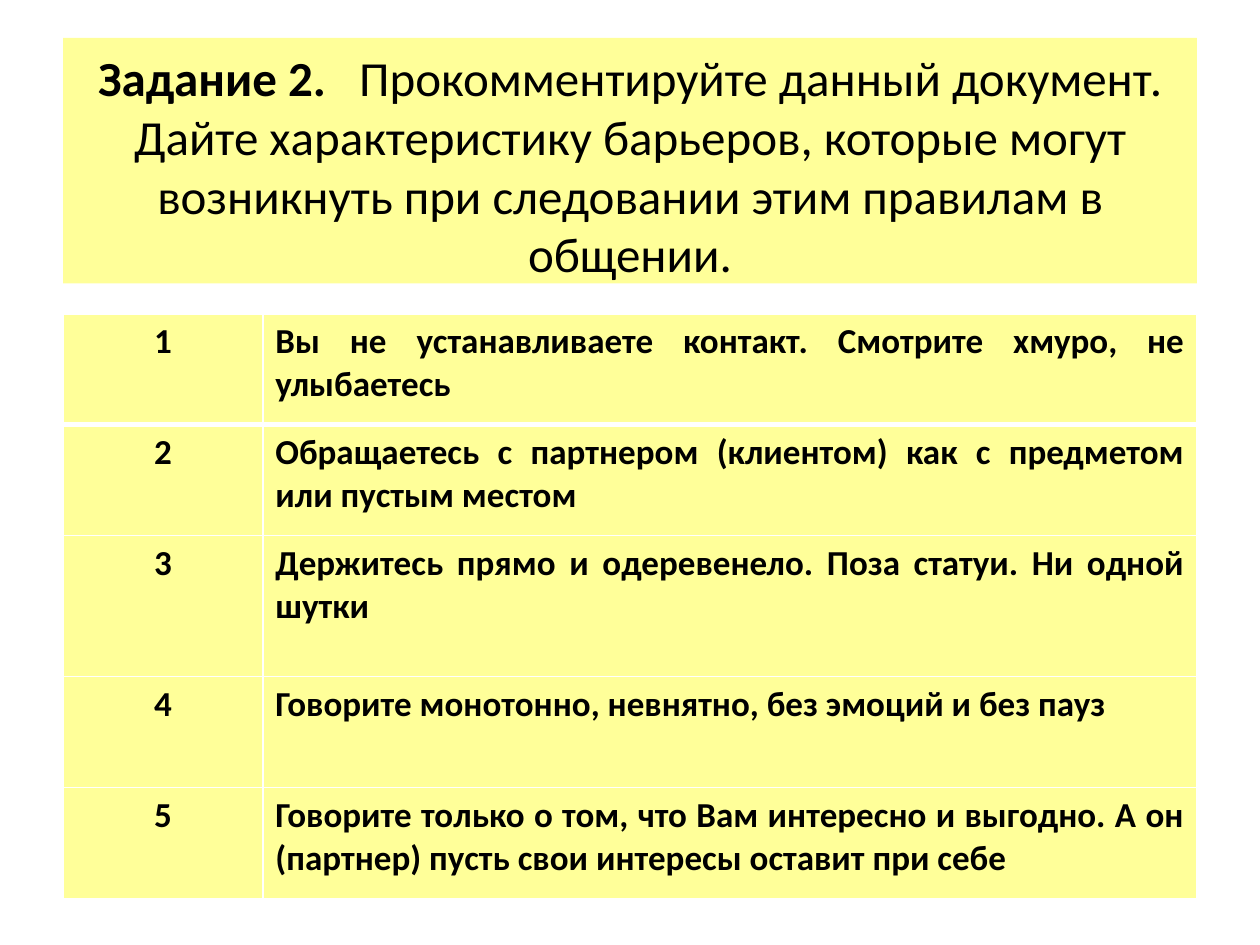
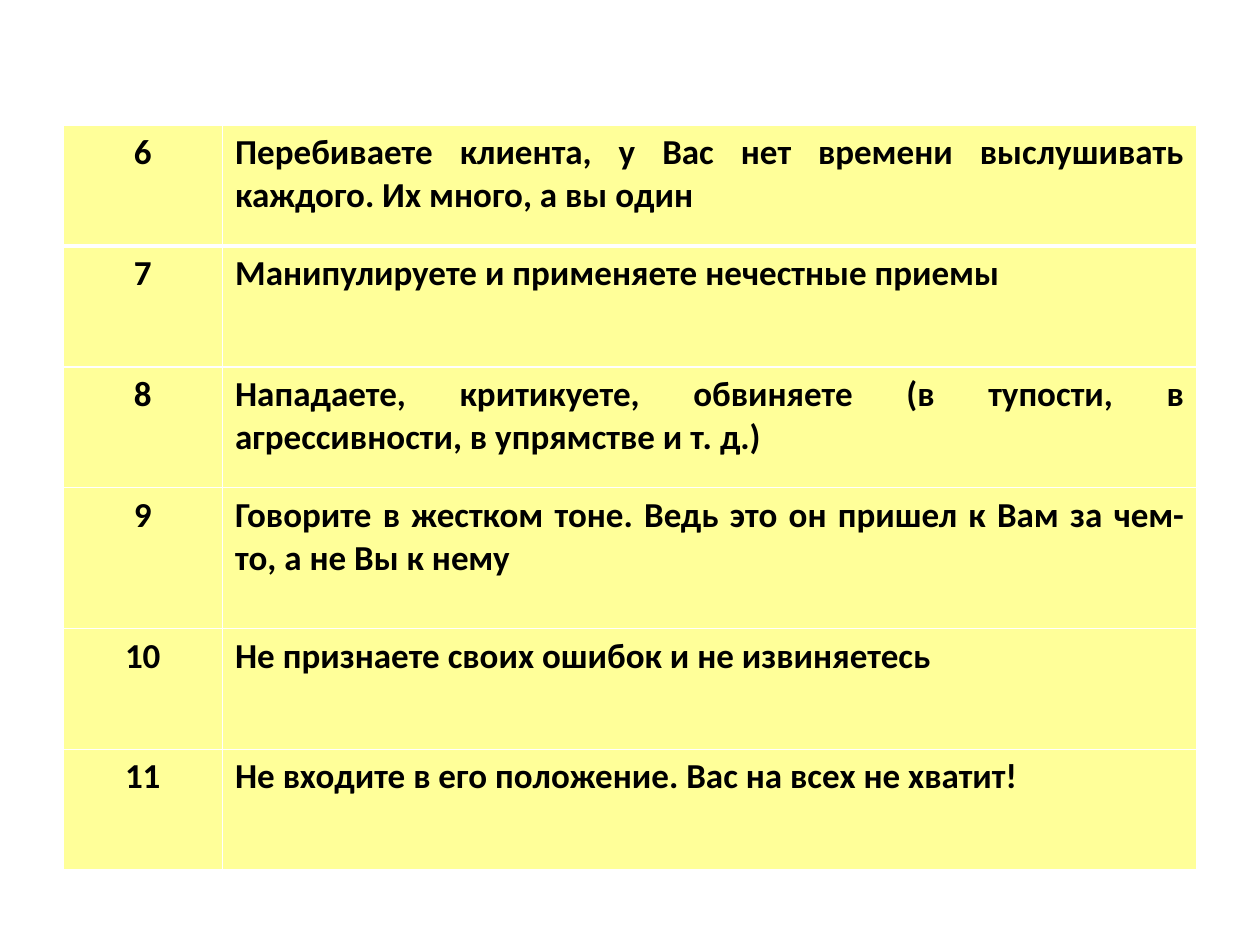
"""Build two slides about communication barriers: a task title and a numbered list of rules."""
from lxml import etree
from pptx import Presentation
from pptx.dml.color import RGBColor
from pptx.enum.text import MSO_ANCHOR, MSO_AUTO_SIZE, PP_ALIGN
from pptx.oxml.ns import qn
from pptx.util import Pt

CENTER, JUSTIFY = PP_ALIGN.CENTER, PP_ALIGN.JUSTIFY
MIDDLE, NO_FIT = MSO_ANCHOR.MIDDLE, MSO_AUTO_SIZE.NONE
COLORS = {"panel": "FFFF99", "text": "000000", "border": "FFFFFF"}
FONT = "Calibri"
LEFT, WIDTH = 36, 648

TASK = ("Прокомментируйте данный документ. Дайте характеристику барьеров, "
        "которые могут возникнуть при следовании этим правилам в общении.")
TABLES = [
    {"layout": 5, "top": 179.3, "number_width": 114.2, "first": 1,
     "heights": [63.4, 63.4, 80.6, 63.4, 63.4],
     "rules": [
         "Вы не устанавливаете контакт. Смотрите хмуро, не улыбаетесь",
         "Обращаетесь с партнером (клиентом) как с предметом или пустым местом",
         "Держитесь прямо и одеревенело. Поза статуи. Ни одной шутки",
         "Говорите монотонно, невнятно, без эмоций и без пауз",
         "Говорите только о том, что Вам интересно и выгодно. "
         "А он (партнер) пусть свои интересы оставит при себе"]},
    {"layout": 6, "top": 71.6, "number_width": 91.2, "first": 6,
     "heights": [69, 69, 69, 80.6, 69, 69],
     "rules": [
         "Перебиваете клиента, у Вас нет времени выслушивать каждого. Их много, а вы один",
         "Манипулируете и применяете нечестные приемы",
         "Нападаете, критикуете, обвиняете (в тупости, в агрессивности, в упрямстве и т. д.)",
         "Говорите в жестком тоне. Ведь это он пришел к Вам за чем-то, а не Вы к нему",
         "Не признаете своих ошибок и не извиняетесь",
         "Не входите в его положение. Вас на всех не хватит!"]},
]


def write(p, text, size=20, bold=True, align=CENTER, spacing=0):
    p.alignment = align
    r = p.add_run()
    r.text = text
    r.font.name, r.font.size, r.font.bold = FONT, Pt(size), bold
    r.font.color.rgb = RGBColor.from_string(COLORS["text"])
    if spacing:
        r.font._element.set("spc", str(round(spacing * 100)))


def style_cell(cell, top, bottom):
    tc_pr = cell._tc.get_or_add_tcPr()
    for side, width in (("L", 1), ("R", 1), ("T", top), ("B", bottom)):
        ln = etree.SubElement(tc_pr, qn(f"a:ln{side}"), w=str(Pt(width)))
        fill = etree.SubElement(ln, qn("a:solidFill"))
        etree.SubElement(fill, qn("a:srgbClr"), val=COLORS["border"])
    cell.fill.solid()
    cell.fill.fore_color.rgb = RGBColor.from_string(COLORS["panel"])


prs = Presentation()
prs.slide_width, prs.slide_height = Pt(720), Pt(540)

for spec_table in TABLES:
    s = prs.slides.add_slide(prs.slide_layouts[spec_table["layout"]])
    title = s.shapes.title
    if title is not None:
        title.left, title.top = Pt(LEFT), Pt(21.6)
        title.width, title.height = Pt(WIDTH), Pt(140.4)
        title.fill.solid()
        title.fill.fore_color.rgb = RGBColor.from_string(COLORS["panel"])
        tf = title.text_frame
        tf.word_wrap, tf.auto_size, tf.vertical_anchor = True, NO_FIT, MIDDLE
        tf.margin_top, tf.margin_bottom = Pt(5), Pt(0)
        p = tf.paragraphs[0]
        write(p, "Задание 2.", size=28)
        write(p, " ", size=28, spacing=12.7)
        write(p, TASK, size=28, bold=False)

    heights = spec_table["heights"]
    table = s.shapes.add_table(len(heights), 2, Pt(LEFT), Pt(spec_table["top"]),
                               Pt(WIDTH), Pt(sum(heights))).table
    table.first_row = table.horz_banding = False
    table.columns[0].width = Pt(spec_table["number_width"])
    table.columns[1].width = Pt(WIDTH - spec_table["number_width"])
    for i, (height, rule) in enumerate(zip(heights, spec_table["rules"])):
        table.rows[i].height = Pt(height)
        number = str(spec_table["first"] + i)
        for j, (text, align) in enumerate(((number, CENTER), (rule, JUSTIFY))):
            cell = table.cell(i, j)
            style_cell(cell, top=3 if i == 1 else 1, bottom=3 if i == 0 else 1)
            write(cell.text_frame.paragraphs[0], text, align=align)

prs.save("out.pptx")
